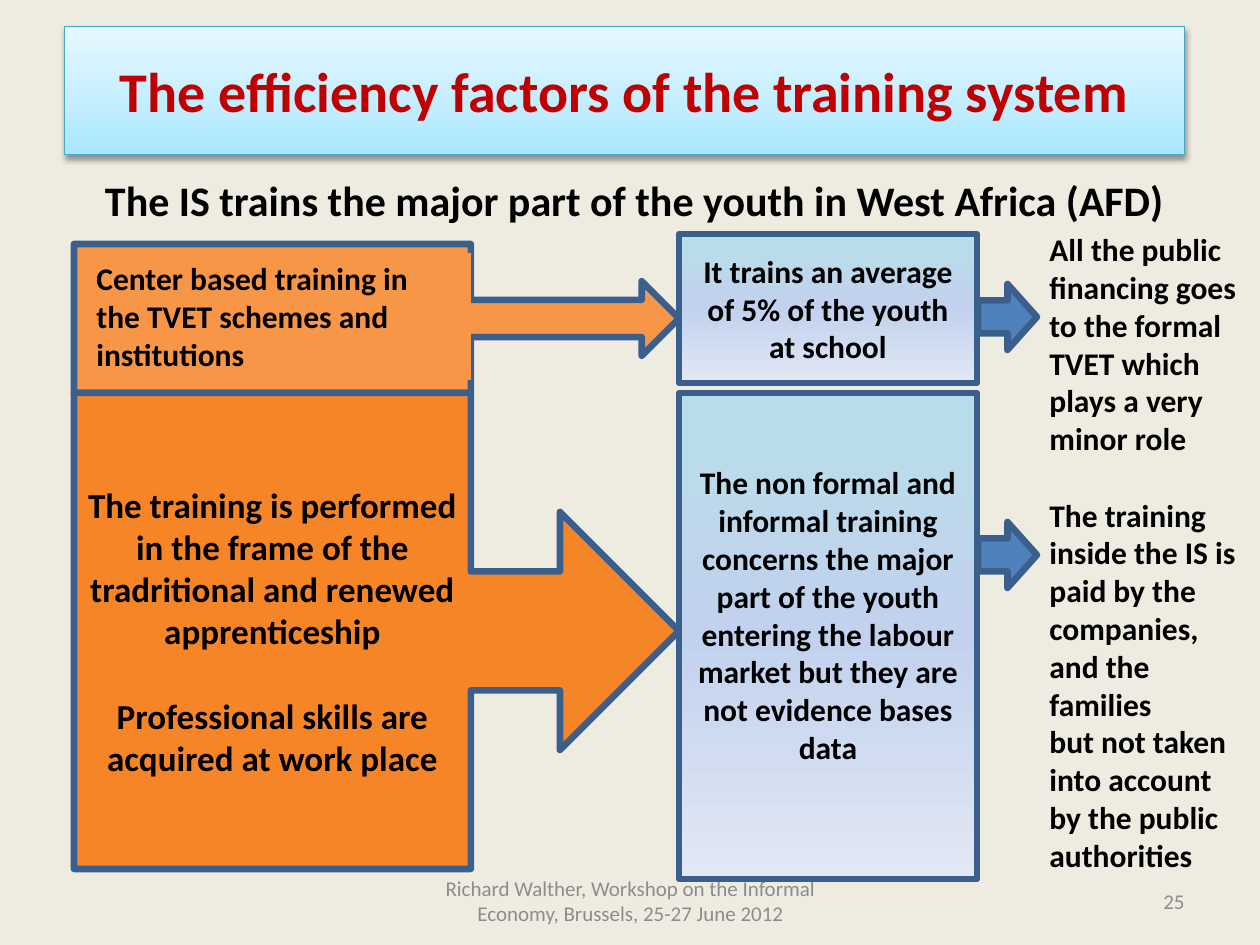
from copy import deepcopy

from lxml import etree
from pptx import Presentation
from pptx import util as u
from pptx.dml.color import RGBColor
from pptx.enum import shapes, text
from pptx.oxml import parse_xml
from pptx.oxml.ns import nsdecls, qn

PX = u.Inches(1) / 126
HUES = {
    "back": "EEECE1", "edge": "3A5F8C", "light": "F79646", "deep": "F68528",
    "blue": "4F81BD", "teal": "46AAC5", "red": "C00000", "ink": "000000",
    "grey": "8C8C8C",
}
SKY = [(0, "A7E6FF"), (35, "C1EDFF"), (100, "E7F8FF")]
MIST = [(0, "B7DEE8"), (50, "C2D1ED"), (100, "E1E8F5")]
LEFT, MID, TOP = text.PP_ALIGN.LEFT, text.PP_ALIGN.CENTER, text.MSO_ANCHOR.TOP
KIND = shapes.MSO_SHAPE


def px(*nums):
    return [u.Emu(round(n * PX)) for n in nums]


def hue(name):
    return RGBColor.from_string(HUES[name])


def blend(fill, stops, angle):
    """Fill with a linear gradient; the angle runs counter-clockwise."""
    fill.gradient()
    fill.gradient_angle = angle
    marks = fill.gradient_stops
    marks[0].color.rgb = RGBColor.from_string(stops[0][1])
    marks[1].color.rgb = RGBColor.from_string(stops[-1][1])
    marks[0].position, marks[1].position = 0, 1
    first = fill._xPr.find(".//" + qn("a:gs"))
    inner = deepcopy(first)
    first.addnext(inner)
    inner.set("pos", str(stops[1][0] * 1000))
    inner.find(qn("a:srgbClr")).set("val", stops[1][1])


def write(shape, paras, size, tint="ink", bold=True, align=MID,
          anchor=text.MSO_ANCHOR.MIDDLE, gap=0):
    """Set the paragraphs; gap is the space in points before the second."""
    frame = shape.text_frame
    frame.word_wrap = True
    frame.auto_size = text.MSO_AUTO_SIZE.NONE
    frame.vertical_anchor = anchor
    frame.text = "\n".join(paras)
    for i, para in enumerate(frame.paragraphs):
        para.alignment = align
        para.space_before = u.Pt(gap if i == 1 else 0)
        for run in para.runs:
            font = run.font
            font.name, font.size, font.bold = "Calibri", u.Pt(size), bold
            font.color.rgb = hue(tint)


def block(slide, kind, box, fill, edge=True):
    shape = slide.shapes.add_shape(kind, *px(*box))
    shape.shadow.inherit = False
    if isinstance(fill, list):
        blend(shape.fill, fill, 270)
    else:
        shape.fill.solid()
        shape.fill.fore_color.rgb = hue(fill)
    if edge:
        shape.line.color.rgb = hue("edge")
        shape.line.width = u.Pt(3.78)
    else:
        shape.line.fill.background()
    return shape


def callout(slide, top, high, fill):
    shape = block(slide, KIND.RIGHT_ARROW_CALLOUT, (74, top, 605, high), fill)
    for i, value in enumerate((0.25, 0.25, 0.25, 0.656)):
        shape.adjustments[i] = value
    return shape


def label(slide, box, paras, size, **look):
    write(slide.shapes.add_textbox(*px(*box)), paras, size, **look)


def head(slide, words):
    title = slide.shapes.title
    title.left, title.top, title.width, title.height = px(64, 26, 1121, 129)
    blend(title.fill, SKY, 90)
    title.line.color.rgb = hue("teal")
    title.line.width = u.Pt(0.5)
    glow = parse_xml(
        f'<a:effectLst {nsdecls("a")}><a:outerShdw blurRad="44450" dist="25400" '
        'dir="5400000" rotWithShape="0"><a:srgbClr val="000000">'
        '<a:alpha val="38000"/></a:srgbClr></a:outerShdw></a:effectLst>')
    title._element.spPr.append(glow)
    write(title, [words], 32, "red")


def main():
    deck = Presentation()
    deck.slide_width, deck.slide_height = px(1260, 945)
    slide = deck.slides.add_slide(deck.slide_layouts[5])
    slide.background.fill.solid()
    slide.background.fill.fore_color.rgb = hue("back")

    head(slide, "The efficiency factors of the training system")
    label(slide, (84, 168, 1101, 64),
          ["The IS trains the major part of the youth in West Africa (AFD)"],
          24, anchor=TOP)
    label(slide, (431, 876, 399, 50),
          ["Richard Walther, Workshop on the Informal Economy, "
           "Brussels, 25-27 June 2012"], 12, tint="grey", bold=False)

    callout(slide, 244, 149, "light")
    center = block(slide, KIND.RECTANGLE, (84, 253, 387, 127), "light", False)
    write(center, ["Center based training in the TVET schemes and institutions"],
          18, align=LEFT, anchor=TOP)
    work = callout(slide, 393, 476, "deep")
    write(work, ["The training is performed in the frame of the tradritional "
                 "and renewed apprenticeship",
                 "Professional skills are acquired at work place"], 20, gap=24.4)

    for top in (284, 522):
        block(slide, KIND.RIGHT_ARROW, (978, top, 59, 66), "blue")
    major = block(slide, KIND.RECTANGLE, (679, 393, 298, 486), MIST)
    write(major, ["The non formal and informal training concerns the major part "
                  "of the youth entering the labour market but they are not "
                  "evidence bases data"], 18)
    major.text_frame.margin_bottom = px(49)[0]
    school = block(slide, KIND.RECTANGLE, (679, 234, 298, 149), MIST)
    write(school, ["It trains an average of 5% of the youth at school"], 18)

    label(slide, (1037, 224, 223, 699),
          ["All the public financing goes to the formal TVET which plays a very "
           "minor role",
           "The training inside the IS is paid by the companies, and the families",
           "but not taken into account by the public authorities"],
          18, align=LEFT, anchor=TOP, gap=22)
    label(slide, (903, 876, 294, 50), ["25"], 12, tint="grey", bold=False,
          align=text.PP_ALIGN.RIGHT)
    deck.save("out.pptx")


if __name__ == "__main__":
    main()
